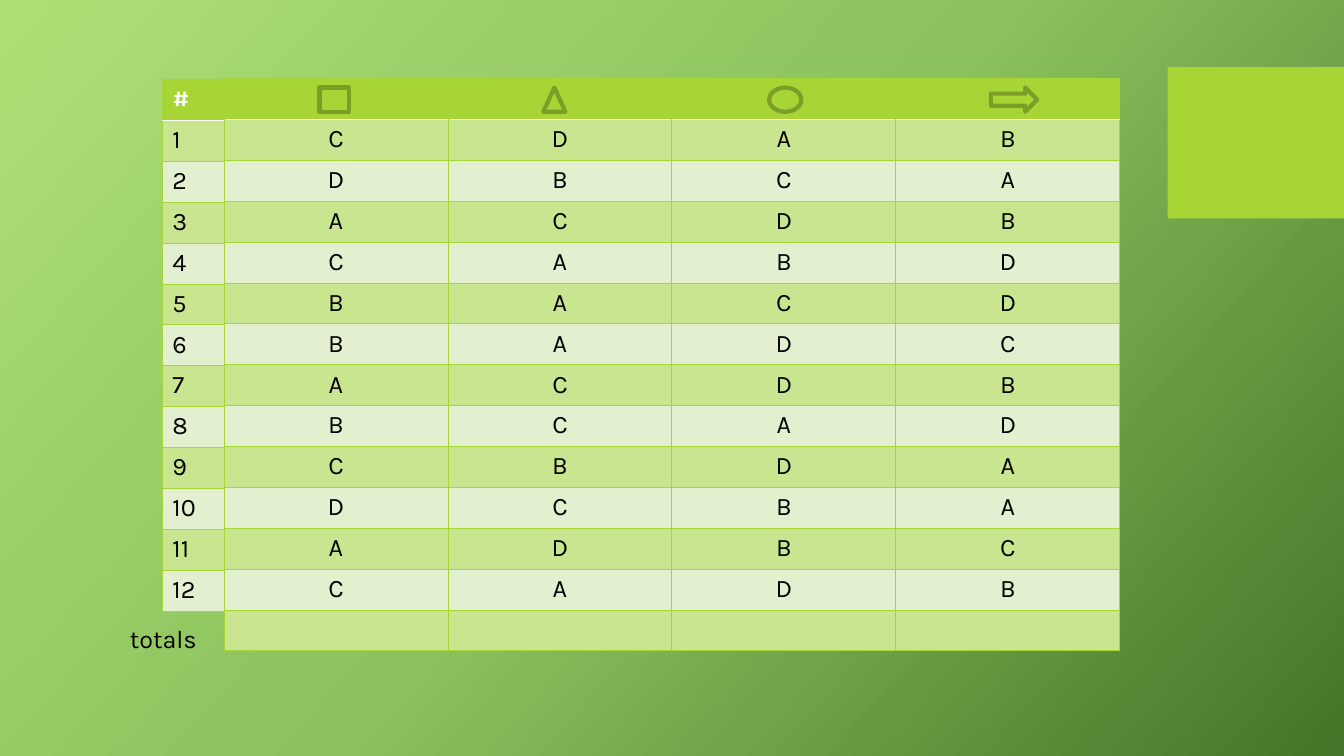
from copy import deepcopy
from dataclasses import dataclass

from lxml.etree import SubElement
from pptx import Presentation
from pptx.dml.color import RGBColor as RGB
from pptx.enum.shapes import MSO_SHAPE as SHAPE
from pptx.enum.text import PP_ALIGN as ALIGN
from pptx.oxml.ns import qn
from pptx.util import Pt


@dataclass(frozen=True)
class Theme:
    accent: str = "A7D535"
    outline: str = "7C9E27"
    band_dark: str = "C9E58F"
    band_light: str = "E2F0CF"
    text: str = "000000"
    header_text: str = "FFFFFF"
    backdrop: tuple = ((0, "AFDE77"), (0.5, "8BC25D"), (1, "437528"))
    backdrop_angle: int = 42
    font: str = "Karla"
    size: int = 18
    grid_width: float = 0.75
    header_rule: float = 1
    icon_line: float = 3


class SlideBuilder:
    def __init__(self, slide, theme):
        self.s = slide
        self.theme = theme

    def background(self):
        fill = self.s.background.fill
        fill.gradient()
        fill.gradient_angle = 360 - self.theme.backdrop_angle
        stop_list = self.s.element.find(".//" + qn("a:gsLst"))
        stop_list.append(deepcopy(stop_list[0]))
        for stop, (position, color) in zip(fill.gradient_stops, self.theme.backdrop):
            stop.position = position
            stop.color.rgb = RGB.from_string(color)

    def shape(self, kind, left, top, width, height, line=None):
        sp = self.s.shapes.add_shape(kind, Pt(left), Pt(top), Pt(width), Pt(height))
        sp.shadow.inherit = False
        sp.fill.solid()
        sp.fill.fore_color.rgb = RGB.from_string(self.theme.accent)
        if line:
            sp.line.color.rgb = RGB.from_string(line)
            sp.line.width = Pt(self.theme.icon_line)
        else:
            sp.line.fill.background()

    def paragraph(self, p, text, color, bold=False, align=ALIGN.LEFT):
        p.text = text
        p.alignment = align
        p.font.name = self.theme.font
        p.font.size = Pt(self.theme.size)
        p.font.bold = bold
        p.font.color.rgb = RGB.from_string(color)

    def text(self, text, left, top, width, height):
        sp = self.s.shapes.add_textbox(Pt(left), Pt(top), Pt(width), Pt(height))
        tf = sp.text_frame
        tf.word_wrap = True
        self.paragraph(tf.paragraphs[0], text, self.theme.text)

    def border(self, cell, side, color, width):
        ln = SubElement(cell._tc.get_or_add_tcPr(), qn(f"a:ln{side}"), w=str(Pt(width)))
        if color:
            SubElement(SubElement(ln, qn("a:solidFill")), qn("a:srgbClr"), val=color)
        else:
            SubElement(ln, qn("a:noFill"))

    def cell_borders(self, cell, header, below_header, first, last):
        t = self.theme
        white_rule = (t.header_text, t.header_rule)
        grid = (t.accent, t.grid_width)
        hidden = (None, 0)
        self.border(cell, "L", *(hidden if header and not first else grid))
        self.border(cell, "R", *(hidden if header and not last else grid))
        self.border(cell, "T", *(white_rule if below_header else grid))
        self.border(cell, "B", *(white_rule if header else grid))

    def table(self, rows, left, top, col_width, row_height, align):
        t = self.theme
        n = len(rows[0])
        table = self.s.shapes.add_table(
            len(rows), n, Pt(left), Pt(top),
            Pt(col_width * n), Pt(row_height * len(rows))).table
        table.horz_banding = False
        for column in table.columns:
            column.width = Pt(col_width)
        for i, values in enumerate(rows):
            table.rows[i].height = Pt(row_height)
            header = i == 0
            band = t.accent if header else t.band_dark if i % 2 else t.band_light
            for j, value in enumerate(values):
                cell = table.cell(i, j)
                self.cell_borders(cell, header, i == 1, j == 0, j == n - 1)
                cell.fill.solid()
                cell.fill.fore_color.rgb = RGB.from_string(band)
                self.paragraph(cell.text_frame.paragraphs[0], value,
                               t.header_text if header else t.text, header, align)


ANSWERS = ("CDAB DBCA ACDB CABD BACD BADC "
           "ACDB BCAD CBDA DCBA ADBC CADB").split()
ICONS = (
    (SHAPE.RECTANGLE, 228.2, 20.9),
    (SHAPE.ISOSCELES_TRIANGLE, 388.1, 15.8),
    (SHAPE.OVAL, 549.4, 23),
    (SHAPE.RIGHT_ARROW, 707.8, 33.1),
)
ROW_HEIGHT = 29.2


def main():
    prs = Presentation()
    prs.slide_width, prs.slide_height = Pt(960), Pt(540)
    theme = Theme()
    b = SlideBuilder(prs.slides.add_slide(prs.slide_layouts[6]), theme)

    b.background()
    b.shape(SHAPE.RECTANGLE, 834, 48, 126, 108)

    blank_row = [""] * len(ICONS)
    answer_rows = [blank_row, *map(list, ANSWERS), blank_row]
    b.table(answer_rows, 160, 56.2, 160, ROW_HEIGHT, ALIGN.CENTER)
    number_rows = [["#"], *([str(i + 1)] for i in range(len(ANSWERS)))]
    b.table(number_rows, 116, 56.9, 44, ROW_HEIGHT, ALIGN.LEFT)
    b.text("totals", 85.7, 442, 74, 29)

    for kind, left, width in ICONS:
        b.shape(kind, left, 62.6, width, 17.3, theme.outline)

    prs.save("out.pptx")


if __name__ == "__main__":
    main()
